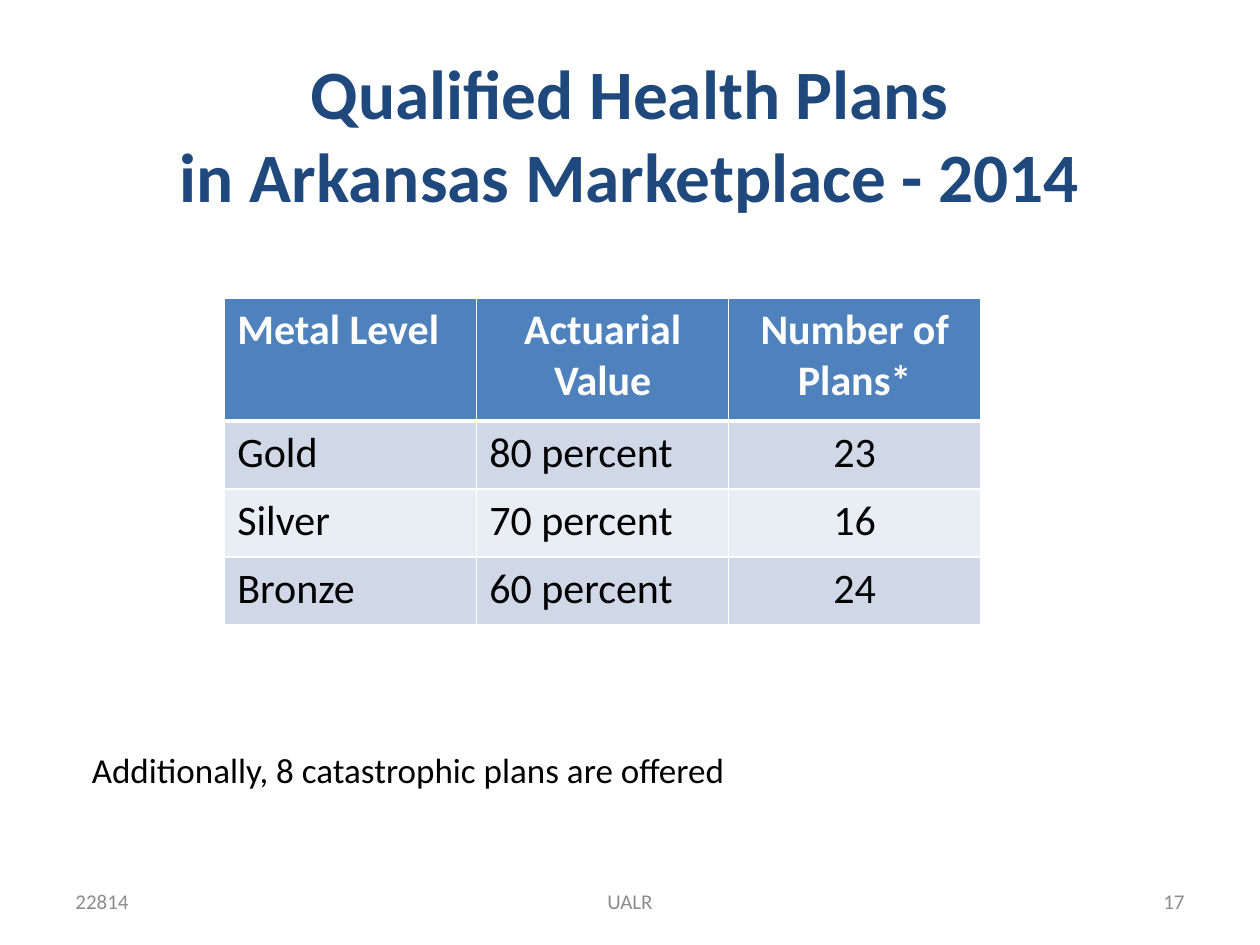
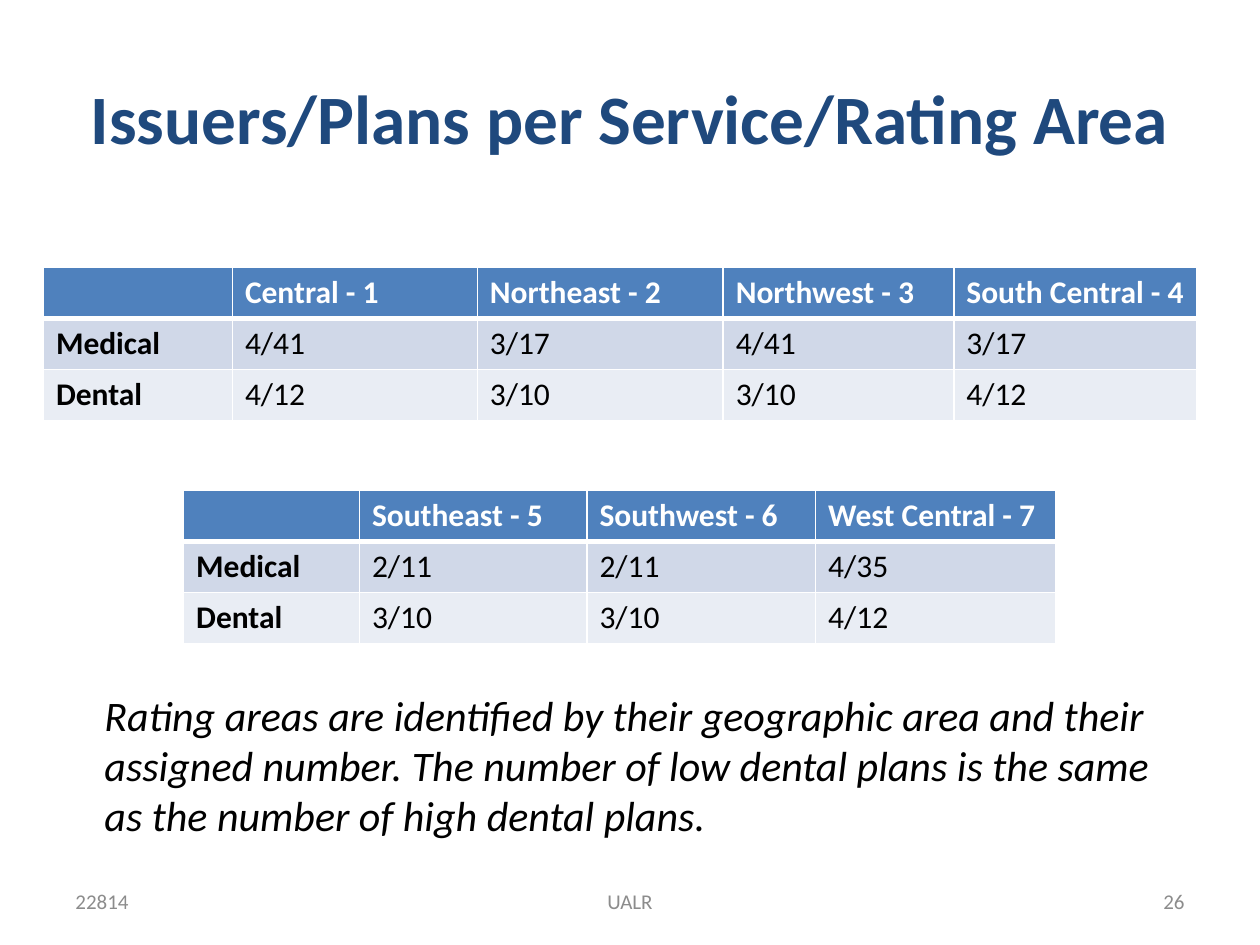
import dataclasses

import lxml.etree
import pptx
import pptx.dml.color
import pptx.enum.text
import pptx.oxml.ns
import pptx.util

Pt = pptx.util.Pt
Align = pptx.enum.text.PP_ALIGN
Anchor = pptx.enum.text.MSO_ANCHOR


@dataclasses.dataclass(frozen=True)
class Theme:
    """Colours, font and type sizes that the slides share."""
    font: str = "Calibri"
    navy: str = "1F497D"
    blue: str = "4F81BD"
    bands: tuple = ("D0D8E8", "E9EDF4")
    white: str = "FFFFFF"
    black: str = "000000"
    gray: str = "8C8C8C"
    title: float = 39.6
    large: float = 24
    note: float = 20
    small: float = 18
    foot: float = 12


THEME = Theme()


def paint(frame, size, color, align=Align.LEFT, bold=False, slant=False):
    """Format every paragraph and run of a text frame."""
    for para in frame.paragraphs:
        para.alignment = align
        for run in para.runs:
            font = run.font
            font.name, font.size = THEME.font, Pt(size)
            font.bold, font.italic = bold, slant
            font.color.rgb = pptx.dml.color.RGBColor.from_string(color)


def place(shape, box):
    """Set the left, top, width and height of a shape in points."""
    shape.left, shape.top, shape.width, shape.height = map(Pt, box)


def add_title(slide, text, height):
    """Fill and place the title placeholder."""
    title = slide.shapes.title
    place(title, (36, 21.6, 648, height))
    frame = title.text_frame
    frame.text = text
    frame.auto_size = pptx.enum.text.MSO_AUTO_SIZE.NONE
    frame.vertical_anchor = Anchor.MIDDLE
    paint(frame, THEME.title, THEME.navy, Align.CENTER, bold=True)


def add_text(slide, text, box, size, color=THEME.black, align=Align.LEFT,
             anchor=Anchor.TOP, slant=False):
    """Add a wrapped text box."""
    frame = slide.shapes.add_textbox(*map(Pt, box)).text_frame
    frame.word_wrap = True
    frame.vertical_anchor = anchor
    frame.text = text
    paint(frame, size, color, align, slant=slant)


def add_foot(slide, number):
    """Add the date, the group name and the slide number."""
    parts = (("22814", 36, 168, Align.LEFT),
             ("UALR", 246, 228, Align.CENTER),
             (number, 516, 168, Align.RIGHT))
    for text, left, width, align in parts:
        add_text(slide, text, (left, 500.4, width, 28.8), THEME.foot,
                 THEME.gray, align, Anchor.MIDDLE)


def add_edge(cell, side, width):
    """Draw one white border of a cell."""
    line = lxml.etree.SubElement(cell._tc.get_or_add_tcPr(),
                                 pptx.oxml.ns.qn(f"a:ln{side}"), w=str(Pt(width)))
    fill = lxml.etree.SubElement(line, pptx.oxml.ns.qn("a:solidFill"))
    lxml.etree.SubElement(fill, pptx.oxml.ns.qn("a:srgbClr"), val=THEME.white)


def add_grid(slide, rows, spot, widths, heights, size, side=False,
             centred=lambda row, col: False):
    """Add a banded table, with a bold first column if side is set."""
    table = slide.shapes.add_table(len(rows), len(widths), *map(Pt, spot),
                                   Pt(sum(widths)), Pt(sum(heights))).table
    for col, width in zip(table.columns, widths):
        col.width = Pt(width)
    for line, height in zip(table.rows, heights):
        line.height = Pt(height)
    for row, texts in enumerate(rows):
        head = row == 0
        shade = THEME.blue if head else THEME.bands[(row - 1) % 2]
        edges = {"L": 1, "R": 1, "T": 3 if row == 1 else 1, "B": 3 if head else 1}
        for col, text in enumerate(texts):
            cell = table.cell(row, col)
            cell.text_frame.text = text
            paint(cell.text_frame, size, THEME.white if head else THEME.black,
                  Align.CENTER if centred(row, col) else Align.LEFT,
                  bold=head or (side and col == 0))
            for edge, width in edges.items():
                add_edge(cell, edge, width)
            cell.fill.solid()
            cell.fill.fore_color.rgb = pptx.dml.color.RGBColor.from_string(shade)


def add_slide(deck, title, height, number):
    """Add a slide with its title and footer."""
    slide = deck.slides.add_slide(deck.slide_layouts[5])
    add_title(slide, title, height)
    add_foot(slide, number)
    return slide


def add_plans(deck):
    """Build the slide of plans by metal level."""
    slide = add_slide(deck, "Qualified Health Plans\vin Arkansas Marketplace - 2014",
                      108.7, "17")
    rows = (("Metal Level", "Actuarial Value", "Number of Plans*"),
            ("Gold", "80 percent", "23"),
            ("Silver", "70 percent", "16"),
            ("Bronze", "60 percent", "24"))
    add_grid(slide, rows, (128.4, 170.6), [144] * 3, [70] + [38.9] * 3, THEME.large,
             centred=lambda row, col: col == 2 or (row, col) == (0, 1))
    add_text(slide, "Additionally, 8 catastrophic plans are offered",
             (45.4, 424, 638.6, 32), THEME.note)


def add_areas(deck):
    """Build the slide of issuers and plans by area."""
    slide = add_slide(deck, "Issuers/Plans per Service/Rating Area", 90, "26")
    north = (("", "Central - 1", "Northeast - 2", "Northwest - 3", "South Central - 4"),
             ("Medical", "4/41", "3/17", "4/41", "3/17"),
             ("Dental", "4/12", "3/10", "3/10", "4/12"))
    south = (("", "Southeast - 5", "Southwest - 6", "West Central - 7"),
             ("Medical", "2/11", "2/11", "4/35"),
             ("Dental", "3/10", "3/10", "4/12"))
    grids = ((north, (24.8, 152.8), (108, 140, 140.5, 131.8, 138.7)),
             (south, (104.9, 280.2), (100.5, 130, 130.7, 137.3)))
    for rows, spot, widths in grids:
        add_grid(slide, rows, spot, widths, [29.2] * 3, THEME.small, side=True)
    add_text(slide, "Rating areas are identified by their geographic area and their "
             "assigned number. The number of low dental plans is the same as the "
             "number of high dental plans.",
             (52.6, 390.2, 631.4, 94.3), THEME.large, slant=True)


def main():
    """Build and save the deck."""
    deck = pptx.Presentation()
    deck.slide_width, deck.slide_height = Pt(720), Pt(540)
    add_plans(deck)
    add_areas(deck)
    deck.save("out.pptx")


if __name__ == "__main__":
    main()
